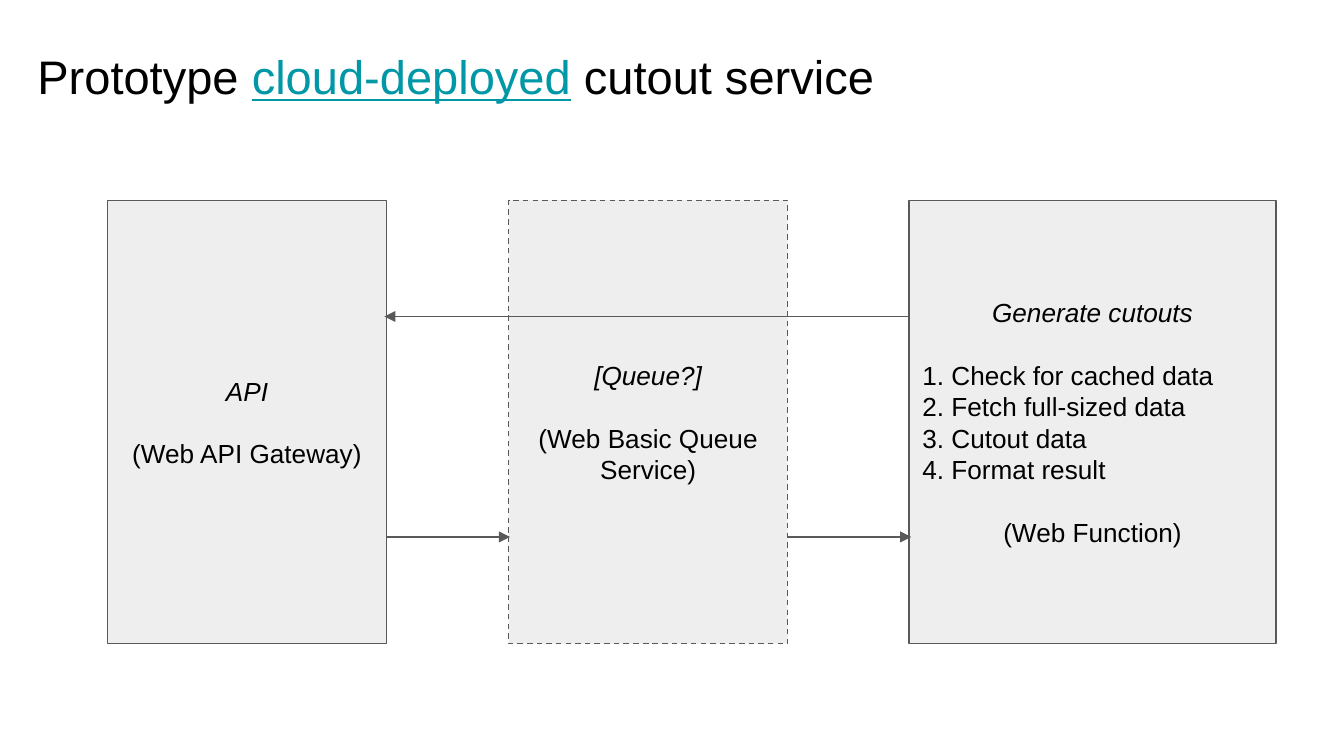
from lxml import etree
from pptx import Presentation
from pptx.dml.color import RGBColor
from pptx.enum.dml import MSO_LINE
from pptx.enum.shapes import MSO_CONNECTOR, MSO_SHAPE
from pptx.enum.text import MSO_ANCHOR, PP_ALIGN
from pptx.oxml.ns import qn
from pptx.util import Pt

PX = 4572  # EMU; 200 px to the inch
RECT = MSO_SHAPE.RECTANGLE
LINE = MSO_CONNECTOR.STRAIGHT
DASH = MSO_LINE.DASH
TOP, MIDDLE = MSO_ANCHOR.TOP, MSO_ANCHOR.MIDDLE
LEFT, CENTER = PP_ALIGN.LEFT, PP_ALIGN.CENTER

FONT = "Arial"
COLORS = {"text": "000000", "link": "0097A7", "fill": "EEEEEE", "line": "595959"}
GAP = 16.8  # points between the parts of a box
INSET = 20

TITLE = [("Prototype ", "text"), ("cloud-deployed", "link"), (" cutout service", "text")]

# left, width, dashed, heading, steps, service
BOXES = [
    (1353, 546, False, "Generate cutouts",
     ["1. Check for cached data", "2. Fetch full-sized data",
      "3. Cutout data", "4. Format result"],
     "(Web Function)"),
    (160, 415, False, "API", [], "(Web API Gateway)"),
    (757, 415, True, "[Queue?]", [], "(Web Basic Queue Service)"),
]
BOX_TOP, BOX_TALL = 298, 660

# from x, to x, y
ARROWS = [(575, 759, 799), (1172, 1356, 799), (1353, 572, 471)]


def px(*nums):
    return [n * PX for n in nums]


def color(name):
    return RGBColor.from_string(COLORS[name])


def set_frame(shape, anchor):
    frame = shape.text_frame
    frame.word_wrap = True
    frame.vertical_anchor = anchor
    frame.margin_left = frame.margin_right = INSET * PX
    frame.margin_top = frame.margin_bottom = INSET * PX
    return frame


def add_run(para, text, size, name="text", italic=False):
    run = para.add_run()
    run.text = text
    font = run.font
    font.name, font.size, font.italic = FONT, Pt(size), italic
    font.color.rgb = color(name)
    font.underline = name == "link"


def set_line(line):
    line.color.rgb = color("line")
    line.width = Pt(0.75)


def add_box(slide, left, width, dashed, head, steps, service):
    box = slide.shapes.add_shape(RECT, *px(left, BOX_TOP, width, BOX_TALL))
    box.shadow.inherit = False
    box.fill.solid()
    box.fill.fore_color.rgb = color("fill")
    set_line(box.line)
    if dashed:
        box.line.dash_style = DASH
    frame = set_frame(box, MIDDLE)
    groups = [([head], CENTER), (steps, LEFT), ([service], CENTER)]
    for group, align in groups:
        for i, text in enumerate(group):
            first = text is head
            para = frame.paragraphs[0] if first else frame.add_paragraph()
            para.alignment = align
            if i == 0 and not first:
                para.space_before = Pt(GAP)
            add_run(para, text, 14, italic=first)


def add_arrow(slide, start, end, y):
    arrow = slide.shapes.add_connector(LINE, *px(start, y, end, y))
    set_line(arrow.line)
    props = arrow._element.spPr
    etree.SubElement(props.find(qn("a:ln")), qn("a:tailEnd"), type="triangle")
    etree.SubElement(props, qn("a:effectLst"))


def main():
    deck = Presentation()
    deck.slide_width, deck.slide_height = px(2000, 1125)
    slide = deck.slides.add_slide(deck.slide_layouts[6])
    title = slide.shapes.add_textbox(*px(36, 51, 1864, 125))
    para = set_frame(title, TOP).paragraphs[0]
    for text, name in TITLE:
        add_run(para, text, 25.2, name)
    for box in BOXES:
        add_box(slide, *box)
    for arrow in ARROWS:
        add_arrow(slide, *arrow)
    deck.save("out.pptx")


if __name__ == "__main__":
    main()
